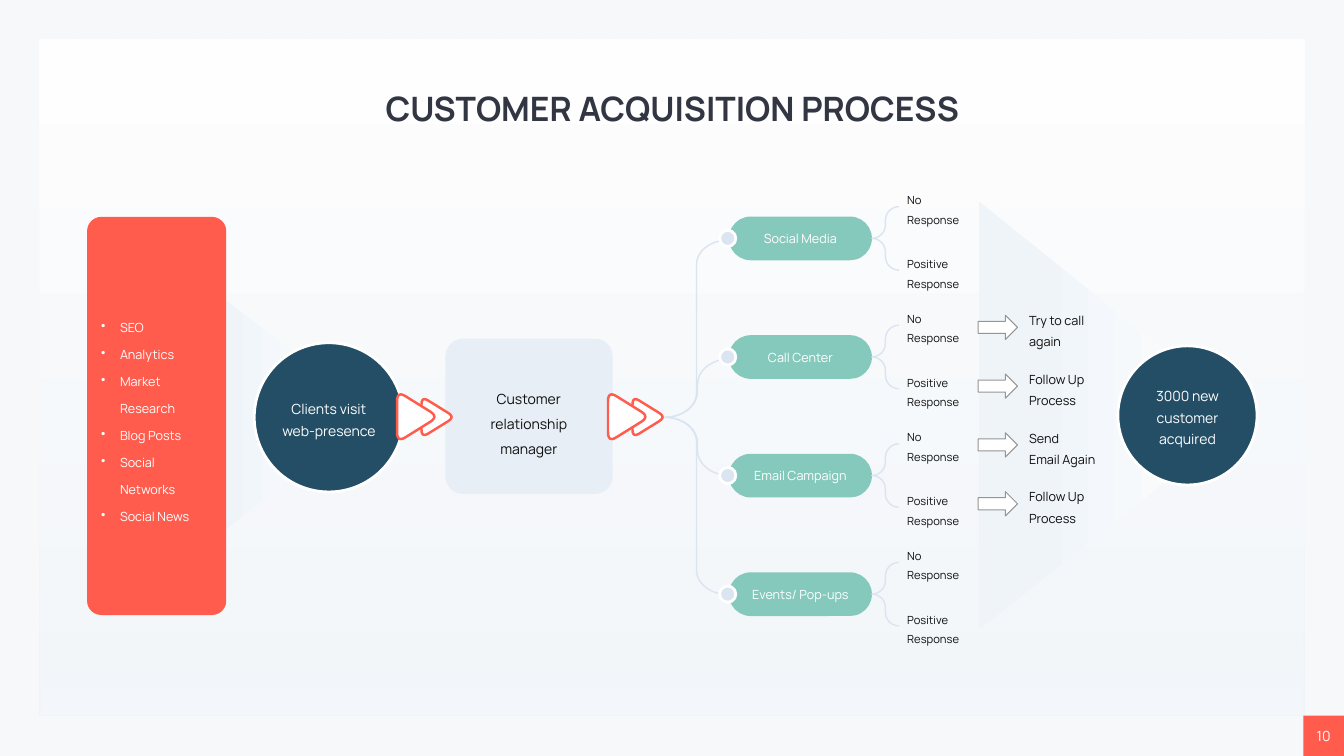
from dataclasses import dataclass

from lxml import etree
from pptx import Presentation
from pptx.dml.color import RGBColor
from pptx.enum.shapes import MSO_SHAPE
from pptx.enum.text import MSO_ANCHOR, MSO_AUTO_SIZE, PP_ALIGN
from pptx.oxml.ns import qn
from pptx.util import Pt

RECTANGLE = MSO_SHAPE.RECTANGLE
ROUNDED = MSO_SHAPE.ROUNDED_RECTANGLE
OVAL = MSO_SHAPE.OVAL
BRACE = MSO_SHAPE.LEFT_BRACE
TRIANGLE = MSO_SHAPE.ISOSCELES_TRIANGLE
ARROW = MSO_SHAPE.RIGHT_ARROW
MIDDLE = MSO_ANCHOR.MIDDLE
LEFT = PP_ALIGN.LEFT
CENTER = PP_ALIGN.CENTER
GROW = MSO_AUTO_SIZE.SHAPE_TO_FIT_TEXT
NO_INSETS = (0, 0)
INSETS = (7.2, 3.6)


@dataclass(frozen=True)
class Theme:
    font: str = "Manrope"
    backdrop: str = "F6F8FA"
    white: str = "FFFFFF"
    mist: str = "EFF4F9"
    card: str = "E7EEF6"
    line: str = "DAE5F1"
    coral: str = "FF5C4D"
    navy: str = "234E65"
    mint: str = "85C9BD"
    gray: str = "959595"
    heading: str = "323643"
    ink: str = "0E0E0E"
    title_size: float = 24
    body_size: float = 10
    label_size: float = 9
    small_size: float = 8


class SlideBuilder:
    def __init__(self, slide, theme):
        self.slide = slide
        self.theme = theme
        slide.background.fill.solid()
        slide.background.fill.fore_color.rgb = RGBColor.from_string(theme.backdrop)

    def paint(self, shape, fill=None, line=None, line_width=1):
        shape.shadow.inherit = False
        if fill:
            shape.fill.solid()
            shape.fill.fore_color.rgb = RGBColor.from_string(fill)
        else:
            shape.fill.background()
        if line:
            shape.line.color.rgb = RGBColor.from_string(line)
            shape.line.width = Pt(line_width)
        else:
            shape.line.fill.background()

    def shape(self, kind, box, fill=None, line=None, line_width=1, adjustments=()):
        shape = self.slide.shapes.add_shape(kind, *map(Pt, box))
        for index, value in enumerate(adjustments):
            shape.adjustments[index] = value
        self.paint(shape, fill, line, line_width)
        return shape

    def gradient(self, shape, end_position=1.0, end_alpha=None):
        """Fade from white at the shape's own top to mist at its bottom."""
        shape.fill.gradient()
        shape.fill.gradient_angle = 270
        start, end = shape.fill.gradient_stops
        start.position, end.position = 0, end_position
        start.color.rgb = RGBColor.from_string(self.theme.white)
        end.color.rgb = RGBColor.from_string(self.theme.mist)
        if end_alpha:
            color = list(shape._element.spPr.iter(qn("a:srgbClr")))[-1]
            etree.SubElement(color, qn("a:alpha")).set("val", str(end_alpha * 1000))

    def funnel(self, box, apex):
        triangle = self.shape(TRIANGLE, box, adjustments=(apex,))
        triangle.rotation = 90
        self.gradient(triangle, end_position=0.79)

    def fill_text(self, shape, lines, size, color, align=CENTER, spacing=None,
                  insets=INSETS, bold=False, bullet_indent=None):
        frame = shape.text_frame
        frame.word_wrap = True
        frame.vertical_anchor = MIDDLE
        frame.margin_left = frame.margin_right = Pt(insets[0])
        frame.margin_top = frame.margin_bottom = Pt(insets[1])
        for index, line in enumerate(lines):
            paragraph = frame.add_paragraph() if index else frame.paragraphs[0]
            paragraph.alignment = align
            if spacing:
                paragraph.line_spacing = spacing
            if bullet_indent:
                self.bullet(paragraph, bullet_indent, color)
            for part_index, part in enumerate(line.split("\n")):
                if part_index:
                    paragraph.add_line_break()
                run = paragraph.add_run()
                run.text = part
                run.font.name = self.theme.font
                run.font.size = Pt(size)
                run.font.bold = bold
                run.font.color.rgb = RGBColor.from_string(color)

    def bullet(self, paragraph, indent, color):
        properties = paragraph._p.get_or_add_pPr()
        properties.set("marL", str(Pt(indent)))
        properties.set("indent", str(-Pt(indent)))
        bullet_color = etree.SubElement(properties, qn("a:buClr"))
        etree.SubElement(bullet_color, qn("a:srgbClr")).set("val", color)
        etree.SubElement(properties, qn("a:buChar")).set("char", "•")

    def text(self, box, content, size, spacing, align=LEFT):
        text_box = self.slide.shapes.add_textbox(*map(Pt, box))
        self.fill_text(text_box, [content], size, self.theme.ink, align, spacing, NO_INSETS)
        text_box.text_frame.auto_size = GROW

    def title(self, box, content):
        title = self.slide.shapes.title
        # Bring the title in front of the panels drawn so far
        title._element.getparent().append(title._element)
        title.left, title.top, title.width, title.height = map(Pt, box)
        self.fill_text(title, [content], self.theme.title_size, self.theme.heading, bold=True)
        title.text_frame.auto_size = GROW

    def circle(self, left, top, size, content):
        circle = self.shape(OVAL, (left, top, size, size), self.theme.navy, self.theme.white, 2)
        self.fill_text(circle, [content], self.theme.body_size, self.theme.white,
                       spacing=1.28, insets=NO_INSETS)

    def brace(self, box, curve):
        self.shape(BRACE, box, line=self.theme.line, adjustments=(curve, 0.5))

    def rounded_triangle(self, left, top, width, height, cut=0.2, steps=6):
        corners = [(left, top - 0.11 * height), (left + 1.09 * width, top + height / 2),
                   (left, top + 1.11 * height)]
        points = []
        for index, corner in enumerate(corners):
            before, after = corners[index - 1], corners[(index + 1) % 3]
            for step in range(steps + 1):
                t = step / steps
                toward_before, toward_after = cut * (1 - t) ** 2, cut * t ** 2
                points.append(tuple(
                    Pt(c + toward_before * (b - c) + toward_after * (a - c))
                    for b, c, a in zip(before, corner, after)))
        builder = self.slide.shapes.build_freeform(*points[0], scale=1.0)
        builder.add_line_segments(points[1:], close=True)
        self.paint(builder.convert_to_shape(), self.theme.white, self.theme.coral, 1.75)

    def double_pointer(self, left, top):
        self.rounded_triangle(left + 17.5, top + 3.2, 21.9, 24.2)
        self.rounded_triangle(left, top, 27.2, 30.2)


def main():
    presentation = Presentation()
    presentation.slide_width, presentation.slide_height = Pt(960), Pt(540)
    theme = Theme()
    builder = SlideBuilder(presentation.slides.add_slide(presentation.slide_layouts[5]), theme)

    # Panels, page number and title
    builder.shape(RECTANGLE, (28.8, 28.8, 902.2, 482.4), theme.white)
    panel = builder.shape(RECTANGLE, (28.4, 28.4, 903.6, 482.4))
    builder.gradient(panel, end_alpha=70)
    page = builder.shape(RECTANGLE, (931, 511.2, 29, 28.8), theme.coral)
    builder.fill_text(page, ["10"], theme.body_size, theme.white)
    builder.title((146.9, 58.3, 666.7, 37.4), "CUSTOMER ACQUISITION PROCESS")

    # Traffic sources leading to the visit
    builder.funnel((95, 231.1, 208.1, 131.8), 0.488)
    sources = builder.shape(ROUNDED, (62.2, 154.9, 99.4, 284.4), theme.coral,
                            adjustments=(0.102,))
    builder.fill_text(sources, ["SEO", "Analytics", "Market Research", "Blog Posts",
                                "Social Networks", "Social News"],
                      theme.label_size, theme.white, LEFT, 1.78, bullet_indent=13.5)
    builder.circle(181.6, 244.8, 106.6, "Clients visit web-presence")

    # Channels, each with two responses
    first_center, channel_step = 170.3, 84.7
    channels = ["Social Media", "Call Center", "Email Campaign", "Events/ Pop-ups"]
    centers = [first_center + index * channel_step for index in range(len(channels))]
    for channel, center in zip(channels, centers):
        pill = builder.shape(ROUNDED, (520.6, center - 15.6, 102.2, 31.2), theme.mint,
                             adjustments=(0.5,))
        builder.fill_text(pill, [channel], theme.label_size, theme.white)
        builder.brace((622.8, center - 22.7, 19.4, 45.4), 0.492)
        for response, offset in (("No Response", -34.4), ("Positive Response", 11.4)):
            builder.text((648, center + offset, 46.1, 23.8), response, theme.small_size, 1.45)

    # Follow-up steps and the result
    builder.funnel((642.2, 201.6, 305.3, 190.8), 0.503)
    steps = ["Try to call again", "Follow Up Process", "Send\nEmail Again", "Follow Up Process"]
    for index, step in enumerate(steps):
        top = 221 + index * 42
        builder.shape(ARROW, (698.7, top + 4.2, 28.1, 17.3), theme.white, theme.gray, 0.75,
                      (0.5, 0.5))
        builder.text((735.1, top, 59.8, 26.6), step, theme.label_size, 1.42)
    builder.circle(798.5, 247, 99.4, "3000 new customer acquired")

    # Relationship manager
    builder.shape(ROUNDED, (318.2, 241.9, 119.5, 110.9), theme.card, adjustments=(0.114,))
    builder.text((347.8, 275.8, 59.8, 48.2), "Customer relationship manager",
                 theme.body_size, 1.48, CENTER)

    # Branches from the manager to the channels
    builder.brace((474.5, 171.4, 46.1, 253.4), 0.38)
    builder.brace((475.2, 256.3, 46.1, 83.5), 0.398)
    for center in centers:
        builder.shape(OVAL, (514, center - 5.8, 11.6, 11.6), theme.line, theme.white, 2)
    for left in (283.6, 434.3):
        builder.double_pointer(left, 282.6)

    presentation.save("out.pptx")


if __name__ == "__main__":
    main()
